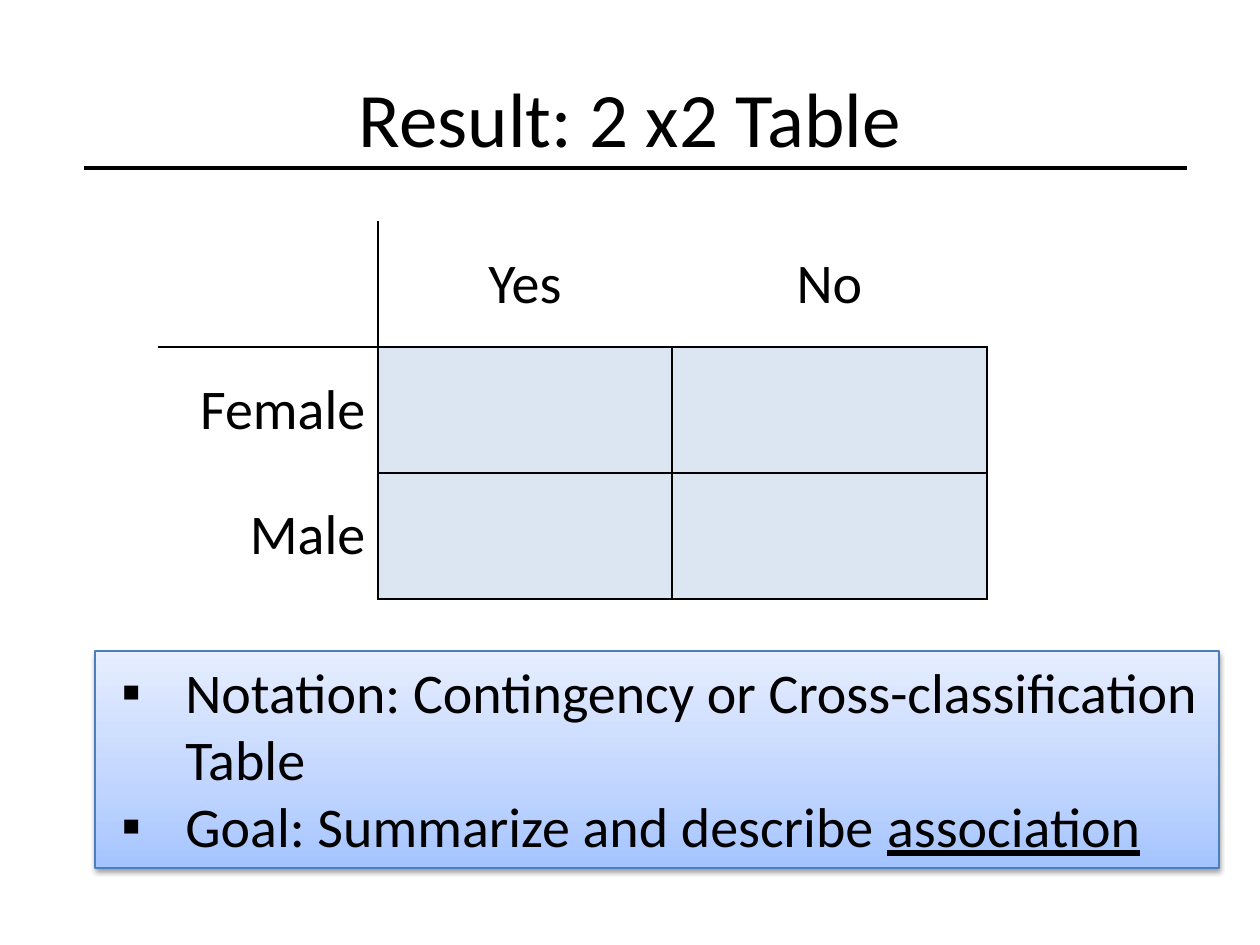
from copy import deepcopy

from lxml import etree
from pptx import Presentation
from pptx.dml.color import RGBColor
from pptx.enum import shapes, text
from pptx.oxml.ns import qn
from pptx.util import Pt

PX = 914400 // 126
FONT, BLACK, CELL = "Calibri", "000000", "DCE6F2"

TITLE = "Result: 2 x2 Table"
TABLE = [
    ["", "Yes", "No"],
    ["Female", "", ""],
    ["Male", "", ""],
]
COLUMNS, ROW = [220, 294, 315], 126
NOTES = [  # paragraphs of (words, underlined) runs
    [("Notation: Contingency or Cross-classification Table", False)],
    [("Goal: Summarize and describe ", False), ("association", True)],
]
GRADIENT = [(0, "A4C4FF"), (0.35, "BFD4FF"), (1, "E6EEFF")]


def px(*lengths):
    return [round(n * PX) for n in lengths]


def color(hex_code):
    return RGBColor.from_string(hex_code)


def add(parent, tag, **attributes):
    return etree.SubElement(parent, qn(tag), attributes)


def add_run(paragraph, words, size, underlined=False):
    run = paragraph.add_run()
    run.text = words
    run.font.size, run.font.name = Pt(size), FONT
    run.font.color.rgb = color(BLACK)
    if underlined:
        run.font.underline = True


def has_rule(line, across):
    """Whether grid line number `line` is drawn along row or column `across`."""
    return line >= 1 and (across >= 1 or line == 1)


def set_borders(cell, row, column):
    edges = {"a:lnL": (column, row), "a:lnR": (column + 1, row),
             "a:lnT": (row, column), "a:lnB": (row + 1, column)}
    properties = cell._tc.get_or_add_tcPr()
    for position, (tag, edge) in enumerate(edges.items()):
        border = add(properties, tag, w=str(Pt(1)))
        if has_rule(*edge):
            add(add(border, "a:solidFill"), "a:srgbClr", val=BLACK)
        else:
            add(border, "a:noFill")
        properties.insert(position, border)


def add_table(slide):
    size = px(158, 221, sum(COLUMNS), ROW * len(TABLE))
    table = slide.shapes.add_table(len(TABLE), len(COLUMNS), *size).table
    table.first_row = table.horz_banding = False
    for column, width in zip(table.columns, px(*COLUMNS)):
        column.width = width
    for r, labels in enumerate(TABLE):
        for c, label in enumerate(labels):
            cell = table.cell(r, c)
            cell.vertical_anchor = text.MSO_ANCHOR.MIDDLE
            if r and c:
                cell.fill.solid()
                cell.fill.fore_color.rgb = color(CELL)
            else:
                cell.fill.background()
            if label:
                paragraph = cell.text_frame.paragraphs[0]
                paragraph.alignment = text.PP_ALIGN.RIGHT if r else text.PP_ALIGN.CENTER
                add_run(paragraph, label, 32)
            set_borders(cell, r, c)


def fill_gradient(shape):
    shape.fill.gradient()
    shape.fill.gradient_angle = 90
    first = shape._element.spPr.find(".//" + qn("a:gs"))
    first.addnext(deepcopy(first))
    for stop, (position, shade) in zip(shape.fill.gradient_stops, GRADIENT):
        stop.position = position
        stop.color.rgb = color(shade)


def add_shadow(shape):
    effects = add(shape._element.spPr, "a:effectLst")
    shadow = add(effects, "a:outerShdw", blurRad=str(Pt(3.1)), dist=str(Pt(1.6)),
                 dir="5400000", rotWithShape="0")
    add(add(shadow, "a:srgbClr", val=BLACK), "a:alpha", val="38000")


def add_notes(slide):
    box = slide.shapes.add_shape(shapes.MSO_SHAPE.RECTANGLE, *px(95, 651, 1124, 217))
    fill_gradient(box)
    box.line.color.rgb = color("4B7EBC")
    box.line.width = Pt(0.75)
    add_shadow(box)
    frame = box.text_frame
    frame.word_wrap = True
    frame.vertical_anchor = text.MSO_ANCHOR.TOP
    indent, hanging = px(78, -64)
    for i, runs in enumerate(NOTES):
        paragraph = frame.add_paragraph() if i else frame.paragraphs[0]
        paragraph.alignment = text.PP_ALIGN.LEFT
        properties = paragraph._p.get_or_add_pPr()
        properties.set("marL", str(indent))
        properties.set("indent", str(hanging))
        add(properties, "a:buFont", typeface="Arial")
        add(properties, "a:buChar", char="▪")
        for words, underlined in runs:
            add_run(paragraph, words, 32, underlined)


def add_title(slide):
    title = slide.shapes.title
    title.left, title.top, title.width, title.height = px(63, 38, 1134, 157)
    title.text_frame.vertical_anchor = text.MSO_ANCHOR.MIDDLE
    paragraph = title.text_frame.paragraphs[0]
    paragraph.alignment = text.PP_ALIGN.CENTER
    add_run(paragraph, TITLE, 44)


def add_title_rule(slide):
    rule = slide.shapes.add_connector(shapes.MSO_CONNECTOR.STRAIGHT, *px(84, 168, 1187, 168))
    rule.line.color.rgb = color(BLACK)
    rule.line.width = Pt(2)
    add(rule._element.spPr, "a:effectLst")


def main():
    deck = Presentation()
    deck.slide_width, deck.slide_height = px(1260, 945)
    slide = deck.slides.add_slide(deck.slide_layouts[5])
    add_title(slide)
    add_table(slide)
    add_notes(slide)
    add_title_rule(slide)
    deck.save("out.pptx")


if __name__ == "__main__":
    main()
